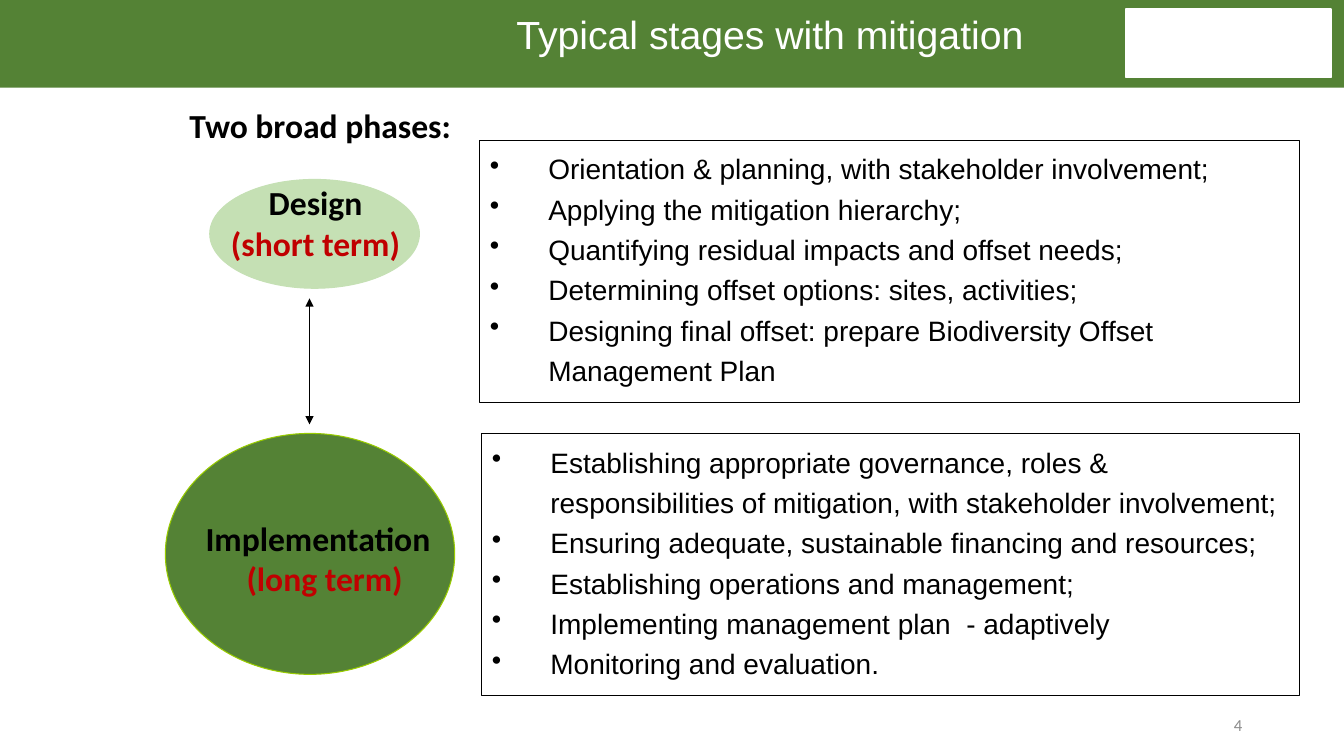
from dataclasses import dataclass
from typing import Optional

import pptx
import pptx.dml.color
import pptx.enum.shapes
import pptx.enum.text
import pptx.oxml
import pptx.oxml.ns
import pptx.util
from pptx.util import Inches

SHAPES = pptx.enum.shapes.MSO_SHAPE
ALIGN = pptx.enum.text.PP_ALIGN
ANCHOR = pptx.enum.text.MSO_ANCHOR


@dataclass(frozen=True)
class Theme:
    green: str = "548235"
    pale_green: str = "C5E0B4"
    lime: str = "99CC00"
    white: str = "FFFFFF"
    black: str = "000000"
    red: str = "C00000"
    grey: str = "8C8C8C"
    heading_font: str = "Calibri"
    body_font: str = "Arial"
    title_size: int = 28
    heading_size: int = 24
    body_size: int = 20
    number_size: int = 12
    thin: float = 0.75


THEME = Theme()


@dataclass(frozen=True)
class Area:
    left: float
    top: float
    width: float
    height: float

    def lengths(self) -> list:
        return [Inches(n) for n in (self.left, self.top, self.width, self.height)]


@dataclass(frozen=True)
class Phase:
    name: str
    term: str
    name_align: ALIGN
    oval: Area
    oval_fill: str
    oval_line: str
    label: Area
    panel: Area
    steps: tuple


PHASES = (
    Phase(
        "Design", "(short term)", ALIGN.CENTER,
        Area(2.08, 1.78, 2.08, 1.08), THEME.pale_green, THEME.pale_green,
        Area(2.01, 1.76, 2.24, 0.9),
        Area(4.76, 1.39, 8.13, 2.6),
        (
            "Orientation & planning, with stakeholder involvement;",
            "Applying the mitigation hierarchy;",
            "Quantifying residual impacts and offset needs;",
            "Determining offset options: sites, activities;",
            "Designing final offset: prepare Biodiversity Offset Management Plan",
        ),
    ),
    Phase(
        "Implementation", "(long term)", ALIGN.LEFT,
        Area(1.64, 4.3, 2.87, 2.39), THEME.green, THEME.lime,
        Area(1.94, 5.09, 2.56, 0.9),
        Area(4.78, 4.3, 8.11, 2.6),
        (
            "Establishing appropriate governance, roles & responsibilities of "
            "mitigation, with stakeholder involvement;",
            "Ensuring adequate, sustainable financing and resources;",
            "Establishing operations and management;",
            "Implementing management plan  - adaptively",
            "Monitoring and evaluation.",
        ),
    ),
)


def rgb(value: str) -> pptx.dml.color.RGBColor:
    return pptx.dml.color.RGBColor.from_string(value)


def add_outline(page, kind: SHAPES, area: Area, fill: str,
                line: Optional[str] = None, weight: float = THEME.thin):
    shape = page.shapes.add_shape(kind, *area.lengths())
    shape.shadow.inherit = False
    shape.fill.solid()
    shape.fill.fore_color.rgb = rgb(fill)
    if line:
        shape.line.color.rgb = rgb(line)
        shape.line.width = pptx.util.Pt(weight)
    else:
        shape.line.fill.background()
    return shape


def add_text_box(page, area: Area, anchor: ANCHOR = ANCHOR.TOP):
    box = page.shapes.add_textbox(*area.lengths())
    box.text_frame.word_wrap = True
    box.text_frame.vertical_anchor = anchor
    return box


def add_bullet(para) -> None:
    properties = para._p.get_or_add_pPr()
    indent = Inches(0.58)
    properties.set("marL", str(indent))
    properties.set("indent", str(-indent))
    bullet = pptx.oxml.ns.qn("a:buChar")
    properties.makeelement(bullet, {"char": "•"})
    properties.append(properties.makeelement(bullet, {"char": "•"}))


def write(box, text: str, *, size: int, font: str, color: str = THEME.black,
          bold: bool = False, align: ALIGN = ALIGN.LEFT,
          spacing: float = 1.0, bullet: bool = False) -> None:
    frame = box.text_frame
    para = frame.add_paragraph() if frame.text else frame.paragraphs[0]
    para.alignment = align
    para.line_spacing = spacing
    if bullet:
        add_bullet(para)
    span = para.add_run()
    span.text = text
    span.font.name = font
    span.font.size = pptx.util.Pt(size)
    span.font.bold = bold
    span.font.color.rgb = rgb(color)


def add_double_arrow(page, x: float, bottom: float, top: float) -> None:
    arrow = page.shapes.add_connector(
        pptx.enum.shapes.MSO_CONNECTOR.STRAIGHT,
        Inches(x), Inches(bottom), Inches(x), Inches(top))
    arrow.line.color.rgb = rgb(THEME.black)
    arrow.line.width = pptx.util.Pt(THEME.thin)
    line = arrow.line._get_or_add_ln()
    for end in ("a:headEnd", "a:tailEnd"):
        line.append(line.makeelement(pptx.oxml.ns.qn(end), {"type": "triangle"}))
    properties = arrow._element.spPr
    properties.append(properties.makeelement(pptx.oxml.ns.qn("a:effectLst"), {}))


def draw_phase(page, phase: Phase) -> None:
    heading = {"size": THEME.heading_size, "font": THEME.heading_font, "bold": True}
    add_outline(page, SHAPES.OVAL, phase.oval, phase.oval_fill, phase.oval_line)
    label = add_text_box(page, phase.label)
    write(label, phase.name, align=phase.name_align, **heading)
    write(label, phase.term, color=THEME.red, align=ALIGN.CENTER, **heading)
    panel = add_outline(page, SHAPES.RECTANGLE, phase.panel, THEME.white, THEME.black)
    panel.text_frame.word_wrap = True
    panel.text_frame.vertical_anchor = ANCHOR.TOP
    for step in phase.steps:
        write(panel, step, size=THEME.body_size, font=THEME.body_font,
              spacing=1.2, bullet=True)


def main() -> None:
    deck = pptx.Presentation()
    deck.slide_width, deck.slide_height = Inches(13.33), Inches(7.5)
    page = deck.slides.add_slide(deck.slide_layouts[6])

    add_outline(page, SHAPES.RECTANGLE, Area(0, -0.03, 13.33, 0.9), THEME.green)
    add_outline(page, SHAPES.RECTANGLE, Area(11.17, 0.09, 2.03, 0.68),
                THEME.white, THEME.white, 1)
    title = add_text_box(page, Area(3.48, 0.11, 8.31, 0.53))
    write(title, "Typical stages with mitigation", size=THEME.title_size,
          font=THEME.body_font, color=THEME.white, align=ALIGN.CENTER, spacing=0.9)

    intro = add_text_box(page, Area(1.78, 0.99, 2.82, 0.5))
    write(intro, "Two broad phases:", size=THEME.heading_size,
          font=THEME.heading_font, bold=True)
    for phase in PHASES:
        draw_phase(page, phase)
    add_double_arrow(page, 3.07, 4.21, 2.96)

    number = add_text_box(page, Area(11.54, 7.04, 0.88, 0.31), ANCHOR.MIDDLE)
    write(number, "4", size=THEME.number_size, font=THEME.heading_font,
          color=THEME.grey, align=ALIGN.RIGHT)
    deck.save("out.pptx")


if __name__ == "__main__":
    main()
